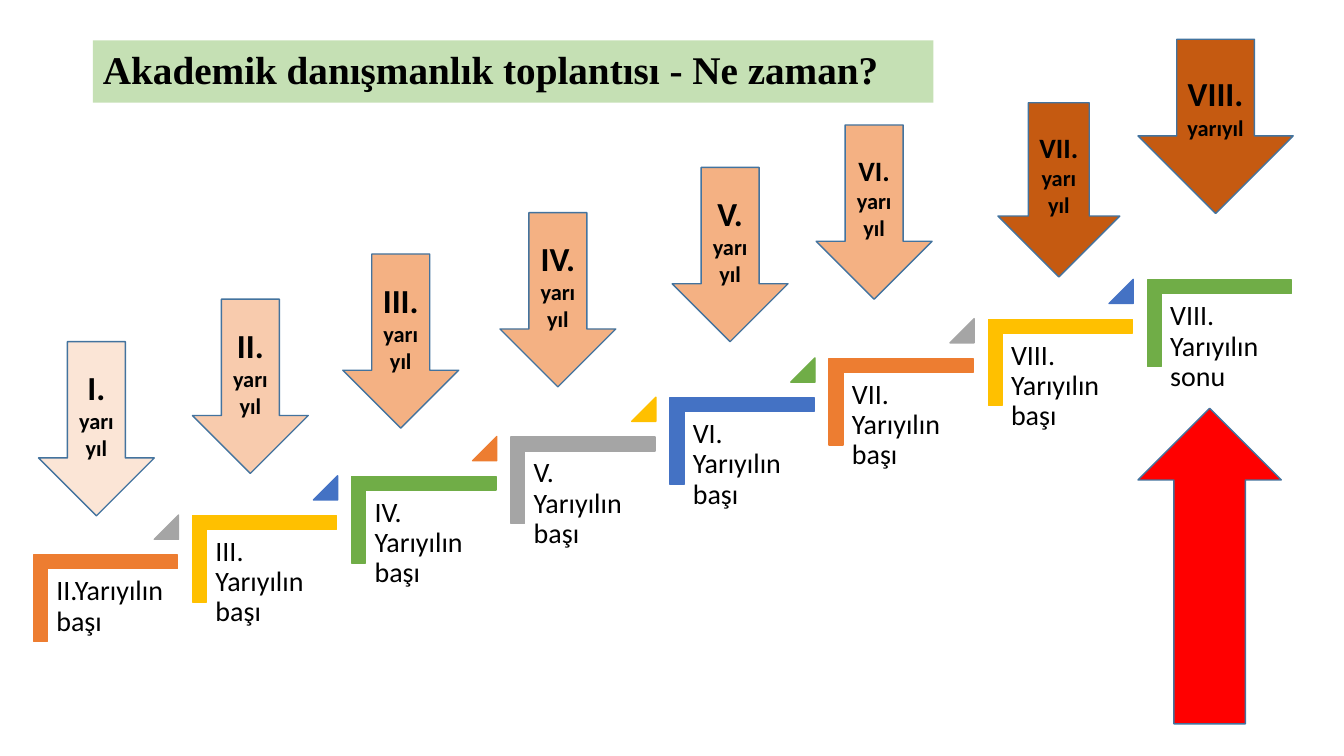
from pptx import Presentation
from pptx.dml.color import RGBColor
from pptx.enum.shapes import MSO_SHAPE
from pptx.enum.text import MSO_ANCHOR, PP_ALIGN
from pptx.util import Cm, Pt

BLACK = RGBColor(0x00, 0x00, 0x00)
TITLE_GREEN = RGBColor(0xC5, 0xE0, 0xB4)
ORANGE = RGBColor(0xED, 0x7D, 0x31)
GRAY = RGBColor(0xA5, 0xA5, 0xA5)
GOLD = RGBColor(0xFF, 0xC0, 0x00)
BLUE = RGBColor(0x44, 0x72, 0xC4)
GREEN = RGBColor(0x70, 0xAD, 0x47)
PALE_PEACH = RGBColor(0xFB, 0xE5, 0xD6)
LIGHT_PEACH = RGBColor(0xF8, 0xCB, 0xAD)
PEACH = RGBColor(0xF4, 0xB1, 0x83)
BROWN = RGBColor(0xC5, 0x5A, 0x11)
RED = RGBColor(0xFF, 0x00, 0x00)
ARROW_LINE = RGBColor(0x43, 0x73, 0x9E)


def add_filled_shape(shapes, kind, box, fill, line):
    shape = shapes.add_shape(kind, *map(Cm, box))
    shape.shadow.inherit = False
    shape.fill.solid()
    shape.fill.fore_color.rgb = fill
    shape.line.color.rgb = line
    shape.line.width = Pt(1)
    return shape


def add_run(paragraph, text, size, bold=False, name="Calibri"):
    run = paragraph.add_run()
    run.text = text
    for attribute, value in {"size": Pt(size), "bold": bold, "name": name}.items():
        setattr(run.font, attribute, value)
    run.font.color.rgb = BLACK


presentation = Presentation()
presentation.slide_width = Cm(33.87)
presentation.slide_height = Cm(19.05)
slide = presentation.slides.add_slide(presentation.slide_layouts[5])

title = slide.shapes.title
title_box = {"left": Cm(2.34), "top": Cm(1.02), "width": Cm(21.18), "height": Cm(1.57)}
for attribute, value in title_box.items():
    setattr(title, attribute, value)
title.fill.solid()
title.fill.fore_color.rgb = TITLE_GREEN
title.text_frame.vertical_anchor = MSO_ANCHOR.MIDDLE
paragraph = title.text_frame.paragraphs[0]
paragraph.alignment = PP_ALIGN.LEFT
paragraph.line_spacing = 0.9
add_run(paragraph, "Akademik danışmanlık toplantısı - Ne zaman?", 28, True, "Times New Roman")

step_colors = [ORANGE, GRAY, GOLD, BLUE, GREEN]
step_texts = [
    "II.Yarıyılın başı",
    "III. Yarıyılın başı",
    "IV. Yarıyılın başı",
    "V. Yarıyılın başı",
    "VI. Yarıyılın başı",
    "VII. Yarıyılın başı",
    "VIII. Yarıyılın başı",
    "VIII. Yarıyılın sonu",
]
step_frame = {
    "word_wrap": True,
    "margin_left": Cm(0.2),
    "margin_right": Cm(0.2),
    "margin_top": Cm(0.2),
    "margin_bottom": Cm(0.2),
}
staircase = slide.shapes.add_group_shape()
for index, text in enumerate(step_texts):
    across, up = 4.01 * index, 0.99 * index
    color = step_colors[2 * index % 5]
    box = (1.57 + across, 13.26 - up, 2.18, 3.63)
    corner = add_filled_shape(staircase.shapes, MSO_SHAPE.CORNER, box, color, color)
    corner.rotation = 90
    corner.adjustments[0] = corner.adjustments[1] = 0.16

    label = staircase.shapes.add_textbox(Cm(1.22 + across), Cm(14.33 - up), Cm(3.28), Cm(2.87))
    for attribute, value in step_frame.items():
        setattr(label.text_frame, attribute, value)
    paragraph = label.text_frame.paragraphs[0]
    paragraph.line_spacing = 0.9
    add_run(paragraph, text, 20)

    if index < len(step_texts) - 1:
        color = step_colors[(2 * index + 1) % 5]
        box = (3.89 + across, 12.98 - up, 0.61, 0.61)
        triangle = add_filled_shape(staircase.shapes, MSO_SHAPE.ISOSCELES_TRIANGLE, box, color, color)
        triangle.adjustments[0] = 1

semester_arrows = [
    ("I. ", 0.97, 8.61, 2.92, PALE_PEACH, 24),
    ("II. ", 4.85, 7.54, 2.92, LIGHT_PEACH, 24),
    ("III. ", 8.64, 6.4, 2.92, PEACH, 24),
    ("IV. ", 12.6, 5.36, 2.92, PEACH, 24),
    ("V. ", 16.94, 4.22, 2.92, PEACH, 24),
    ("VIII. ", 28.68, 0.99, 3.91, BROWN, 24),
    ("VII. ", 25.15, 2.59, 3.07, BROWN, 20),
    ("VI. ", 20.57, 3.15, 2.92, PEACH, 20),
]
for numeral, left, top, width, color, size in semester_arrows:
    box = (left, top, width, 4.39)
    arrow = add_filled_shape(slide.shapes, MSO_SHAPE.DOWN_ARROW, box, color, ARROW_LINE)
    arrow.text_frame.word_wrap = True
    arrow.text_frame.vertical_anchor = MSO_ANCHOR.MIDDLE
    paragraph = arrow.text_frame.paragraphs[0]
    paragraph.alignment = PP_ALIGN.CENTER
    add_run(paragraph, numeral, size, True)
    add_run(paragraph, "yarıyıl", 16, True)

add_filled_shape(slide.shapes, MSO_SHAPE.UP_ARROW, (28.68, 10.29, 3.61, 7.95), RED, ARROW_LINE)

presentation.save("out.pptx")
